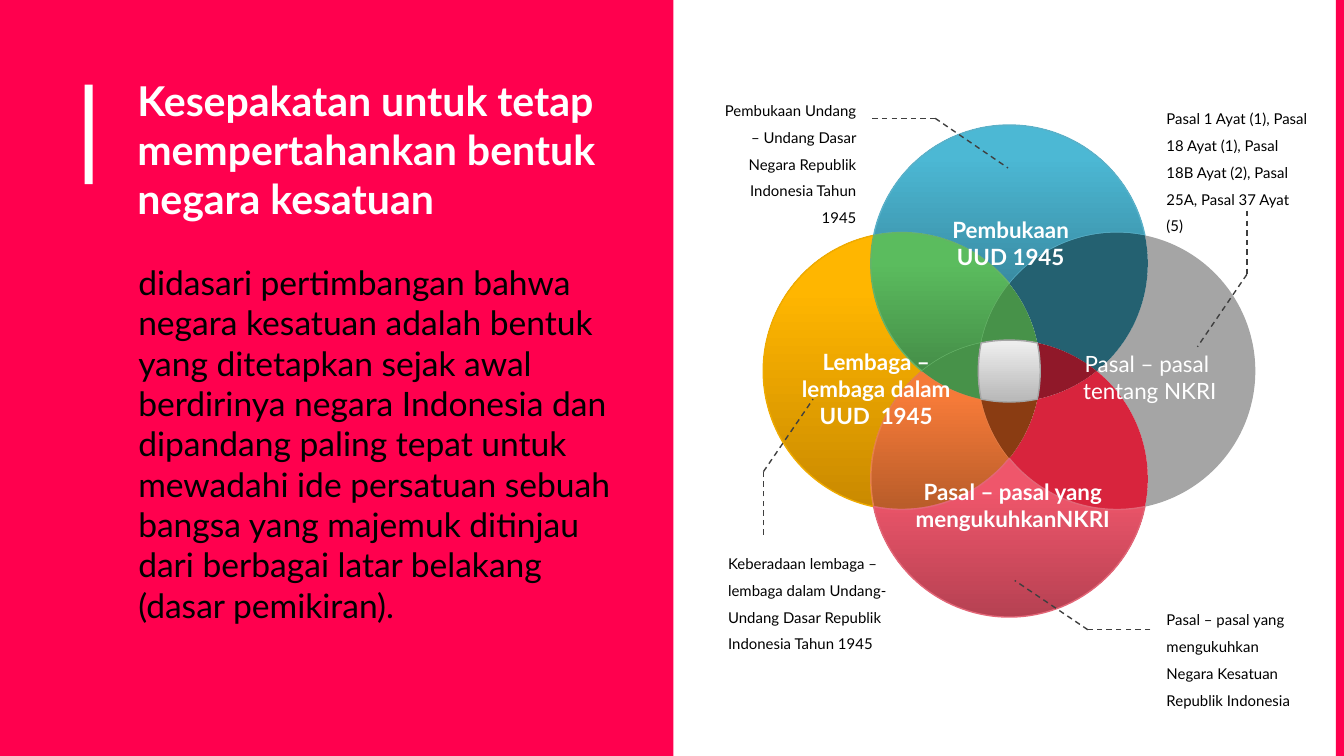
from itertools import pairwise
from math import atan2, ceil, cos, pi, radians, remainder, sin, sqrt, tan

from lxml import etree
from pptx import Presentation
from pptx.dml.color import RGBColor
from pptx.enum.dml import MSO_LINE
from pptx.enum.shapes import MSO_CONNECTOR, MSO_SHAPE
from pptx.enum.text import PP_ALIGN
from pptx.oxml.ns import qn
from pptx.util import Pt

RECTANGLE = MSO_SHAPE.RECTANGLE
STRAIGHT = MSO_CONNECTOR.STRAIGHT
DASH = MSO_LINE.DASH
LEFT, CENTER, RIGHT = PP_ALIGN.LEFT, PP_ALIGN.CENTER, PP_ALIGN.RIGHT

FONT = "Lato"
WHITE = RGBColor(0xFF, 0xFF, 0xFF)
BLACK = RGBColor(0x00, 0x00, 0x00)
CRIMSON = RGBColor(0xFF, 0x00, 0x4E)
LEADER_GRAY = RGBColor(0x3F, 0x3F, 0x3F)
GRAY = RGBColor(0xA5, 0xA5, 0xA5)
RED = RGBColor(0xD8, 0x24, 0x3D)
TEAL = RGBColor(0x24, 0x61, 0x71)
BROWN = RGBColor(0x8A, 0x3C, 0x12)
MAROON = RGBColor(0x90, 0x18, 0x29)
DARK_GREEN = RGBColor(0x47, 0x92, 0x49)
BLUE_LOW, BLUE_HIGH = RGBColor(0x39, 0x8B, 0xA2), RGBColor(0x4C, 0xB8, 0xD4)
BLUE_EDGE = RGBColor(0x5A, 0xB1, 0xC9)
PINK_LOW, PINK_HIGH = RGBColor(0xB6, 0x41, 0x52), RGBColor(0xEF, 0x56, 0x6B)
PINK_EDGE = RGBColor(0xE2, 0x66, 0x77)
GOLD_LOW, GOLD_HIGH = RGBColor(0xCA, 0x8A, 0x00), RGBColor(0xFF, 0xB6, 0x00)
GOLD_EDGE = RGBColor(0xEF, 0xAB, 0x00)
ORANGE_LOW, ORANGE_HIGH = RGBColor(0xBA, 0x5D, 0x2A), RGBColor(0xF5, 0x7A, 0x38)
ORANGE_EDGE = RGBColor(0xE5, 0x80, 0x4B)
GREEN_LOW, GREEN_HIGH = RGBColor(0x45, 0x8E, 0x48), RGBColor(0x5B, 0xBC, 0x5E)
GREEN_EDGE = RGBColor(0x66, 0xB3, 0x68)
SILVER_LOW, SILVER_HIGH = RGBColor(0xBA, 0xBA, 0xBA), RGBColor(0xED, 0xED, 0xED)

VENN_X, VENN_Y = 540.7, 198.8
RADIUS, OFFSET = 74.2, 57.6
SPREAD = sqrt(2 * RADIUS ** 2 - OFFSET ** 2)
OUTER = (OFFSET + SPREAD) / sqrt(2)
INNER = (SPREAD - OFFSET) / sqrt(2)
MIDDLE = sqrt(RADIUS ** 2 - OFFSET ** 2)

PETAL = [(OUTER, -135, 0), (OUTER, -45, 1), (MIDDLE, -90, 3)]
OVERLAP = [(OUTER, -45, 0), (MIDDLE, 0, 2), (INNER, -45, 3), (MIDDLE, -90, 1)]
WEDGE = [(MIDDLE, -90, 1), (INNER, -135, 2), (INNER, -45, 3)]
CORE = [(INNER, -45, 3), (INNER, 45, 0), (INNER, 135, 1), (INNER, -135, 2)]

REGIONS = [
    (PETAL, 1, (GRAY,)),
    (OVERLAP, 1, (RED,)),
    (PETAL, 3, (GOLD_LOW, GOLD_HIGH, GOLD_EDGE)),
    (OVERLAP, 2, (ORANGE_LOW, ORANGE_HIGH, ORANGE_EDGE)),
    (WEDGE, 2, (BROWN,)),
    (PETAL, 0, (BLUE_LOW, BLUE_HIGH, BLUE_EDGE)),
    (OVERLAP, 0, (TEAL,)),
    (WEDGE, 1, (MAROON,)),
    (OVERLAP, 3, (GREEN_LOW, GREEN_HIGH, GREEN_EDGE)),
    (WEDGE, 3, (DARK_GREEN,)),
    (WEDGE, 0, (DARK_GREEN,)),
    (CORE, 0, (SILVER_LOW, SILVER_HIGH, GRAY)),
    (PETAL, 2, (PINK_LOW, PINK_HIGH, PINK_EDGE)),
]

CIRCLE_LABELS = [
    ("Pembukaan UUD 1945", 496, 112.3, 91, 17, True),
    ("Pasal – pasal yang mengukuhkanNKRI", 471.6, 252.7, 142, 23, True),
    ("Lembaga – lembaga dalam UUD  1945", 413.3, 182.9, 112.3, 15, True),
    ("Pasal – pasal  tentang NKRI", 566, 184.3, 100, 14, False),
]

CALLOUTS = [
    ("Keberadaan lembaga – lembaga dalam Undang-Undang Dasar Republik Indonesia "
     "Tahun 1945", 383, 288.7, 100, LEFT),
    ("Pasal – pasal yang mengukuhkan Negara Kesatuan Republik Indonesia",
     617.8, 319, 90, LEFT),
    ("Pasal 1 Ayat (1), Pasal 18 Ayat (1), Pasal 18B Ayat (2), Pasal 25A, "
     "Pasal 37 Ayat (5)", 617.8, 50.4, 90, LEFT),
    ("Pembukaan Undang – Undang Dasar Negara Republik Indonesia Tahun 1945",
     377.3, 46, 88.6, RIGHT),
]

LEADERS = [
    [(467.3, 63.4), (501, 63.4), (540, 90)],
    [(409, 286.6), (409, 252.7), (435.6, 213.8)],
    [(616.3, 337.4), (582.8, 337.4), (543.6, 311)],
    [(668, 113), (668, 147), (641.5, 185.8)],
]

TITLE = "Kesepakatan untuk tetap mempertahankan bentuk negara kesatuan"
BODY = (
    "didasari pertimbangan bahwa negara kesatuan adalah bentuk yang ditetapkan "
    "sejak awal berdirinya negara Indonesia dan dipandang paling tepat untuk "
    "mewadahi ide persatuan sebuah bangsa yang majemuk ditinjau dari berbagai "
    "latar belakang (dasar pemikiran)."
)


def add_block(page, left, top, width, height, color):
    block = page.shapes.add_shape(RECTANGLE, Pt(left), Pt(top), Pt(width), Pt(height))
    block.shadow.inherit = False
    block.fill.solid()
    block.fill.fore_color.rgb = color
    block.line.fill.background()


def add_text(page, text, left, top, width, height, size, color,
             bold=False, align=LEFT, spacing=None, inset=3.6):
    box = page.shapes.add_textbox(Pt(left), Pt(top), Pt(width), Pt(height))
    frame = box.text_frame
    frame.word_wrap = True
    frame.margin_left = frame.margin_right = Pt(7.2)
    frame.margin_top = frame.margin_bottom = Pt(inset)
    frame.text = text
    para = frame.paragraphs[0]
    para.alignment = align
    para.line_spacing = spacing
    font = para.runs[0].font
    font.name, font.size, font.bold = FONT, Pt(size), bold
    font.color.rgb = color


def polar(distance, degrees):
    angle = radians(degrees)
    return distance * cos(angle), distance * sin(angle)


def arc_curves(start, end, center):
    first, last = [atan2(y - center[1], x - center[0]) for x, y in (start, end)]
    sweep = remainder(last - first, 2 * pi)
    pieces = ceil(abs(sweep) / (pi / 2))
    step = sweep / pieces
    pull = 4 / 3 * tan(step / 4)

    def on_page(angle, tangent):
        x = center[0] + RADIUS * (cos(angle) - tangent * sin(angle))
        y = center[1] + RADIUS * (sin(angle) + tangent * cos(angle))
        return Pt(VENN_X + x), Pt(VENN_Y + y)

    angles = [first + step * piece for piece in range(pieces + 1)]
    return [(on_page(a, pull), on_page(b, -pull), on_page(b, 0))
            for a, b in pairwise(angles)]


def region_curves(corners, turns):
    vertices = [polar(distance, degrees + 90 * turns) for distance, degrees, _ in corners]
    ends = vertices[1:] + vertices[:1]
    curves = []
    for start, end, (_, _, circle) in zip(vertices, ends, corners):
        curves += arc_curves(start, end, polar(OFFSET, 90 * (circle + turns) - 90))
    return curves


def add_curved_outline(page, curves):
    ends = [curve[-1] for curve in curves]
    builder = page.shapes.build_freeform(*ends[-1])
    builder.add_line_segments(ends, close=True)
    region = builder.convert_to_shape()
    lines = list(region._element.iter(qn("a:lnTo")))
    for line, curve in zip(lines, curves):
        bezier = etree.Element(qn("a:cubicBezTo"))
        for x, y in curve:
            etree.SubElement(bezier, qn("a:pt"), x=str(x - region.left), y=str(y - region.top))
        line.getparent().replace(line, bezier)
    return region


def add_region(page, corners, turns, colors):
    region = add_curved_outline(page, region_curves(corners, turns))
    region.shadow.inherit = False
    if len(colors) == 1:
        region.fill.solid()
        region.fill.fore_color.rgb = colors[0]
        region.line.fill.background()
        return
    low, high, edge = colors
    region.fill.gradient()
    region.fill.gradient_angle = 90
    for stop, color in zip(region.fill.gradient_stops, (low, high)):
        stop.color.rgb = color
    region.fill.gradient_stops[1].position = 1.0 if corners is CORE else 0.8
    region.line.color.rgb = edge
    region.line.width = Pt(0.75)


def add_leader(page, points):
    for start, end in pairwise(points):
        line = page.shapes.add_connector(STRAIGHT, *map(Pt, start + end))
        line.line.color.rgb = LEADER_GRAY
        line.line.width = Pt(0.75)
        line.line.dash_style = DASH
        etree.SubElement(line._element.spPr, qn("a:effectLst"))


def main():
    deck = Presentation()
    deck.slide_width, deck.slide_height = Pt(720), Pt(405)
    page = deck.slides.add_slide(deck.slide_layouts[6])
    add_block(page, 0, 0, 360.7, 405, CRIMSON)
    add_block(page, 45.4, 45.4, 4.3, 53.3, WHITE)
    add_block(page, 715.7, 0, 4.3, 405, CRIMSON)
    add_text(page, TITLE, 66.5, 33.1, 271.4, 105, 22, WHITE, bold=True, inset=7.2)
    for corners, turns, colors in REGIONS:
        add_region(page, corners, turns, colors)
    for text, left, top, width, height, bold in CIRCLE_LABELS:
        add_text(page, text, left, top, width, height, 12, WHITE, bold, CENTER)
    for text, left, top, width, align in CALLOUTS:
        add_text(page, text, left, top, width, 36.7, 8, BLACK, align=align, spacing=1.5)
    for points in LEADERS:
        add_leader(page, points)
    add_text(page, BODY, 67, 133.2, 271.4, 105, 18, BLACK, inset=7.2)
    deck.save("out.pptx")


if __name__ == "__main__":
    main()
